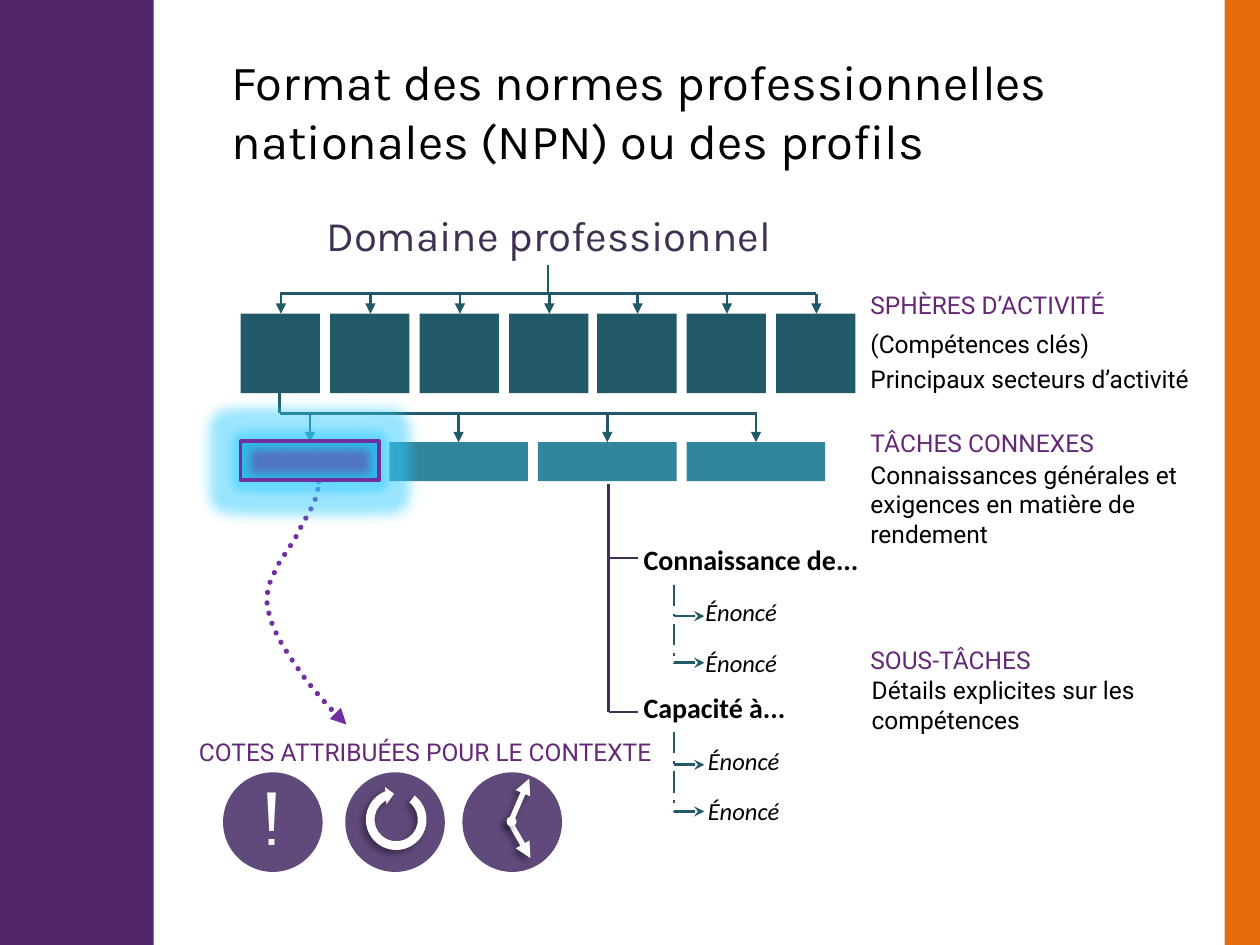
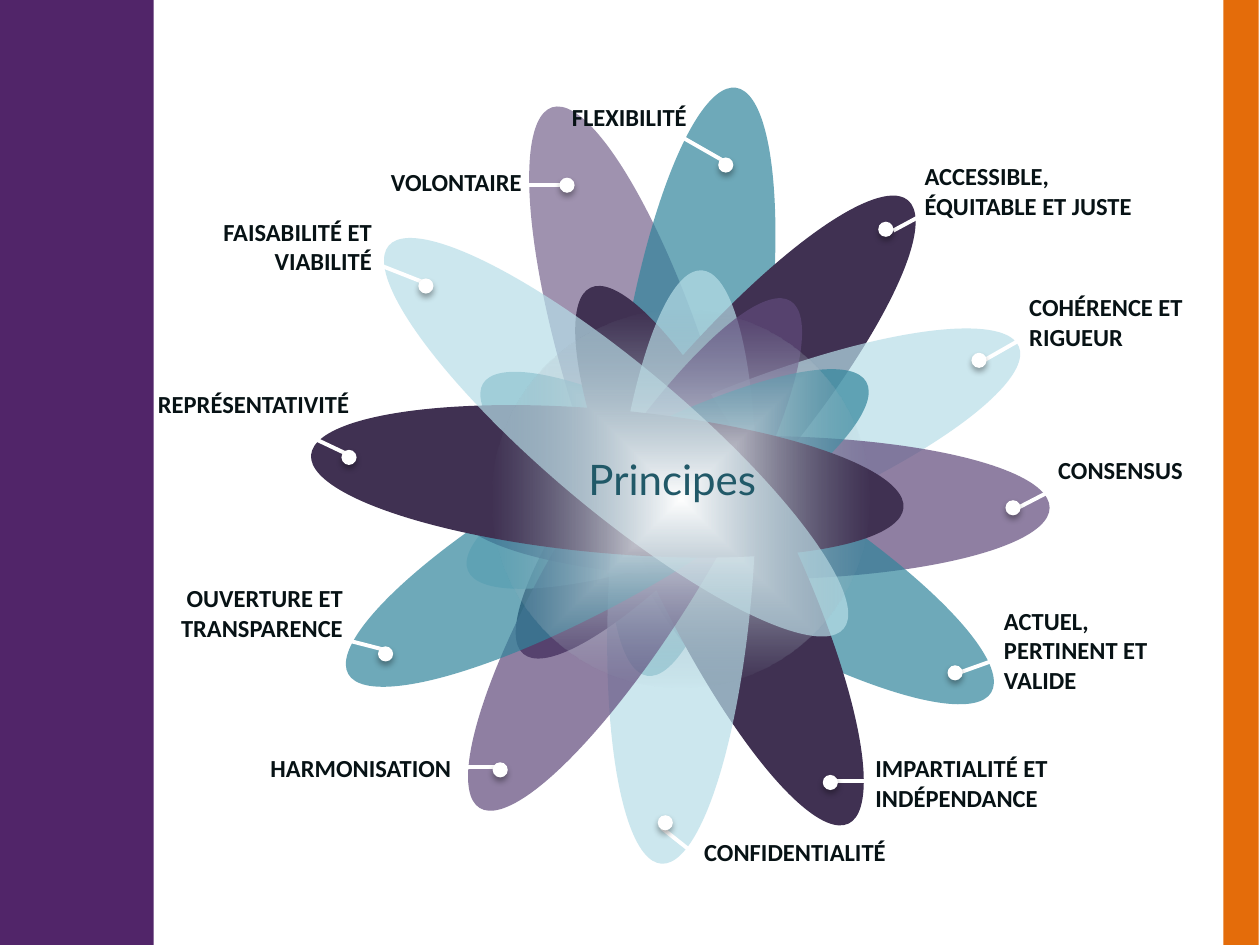
import itertools

import pptx
import pptx.dml.color
import pptx.enum.dml
import pptx.enum.shapes
import pptx.enum.text
import pptx.oxml
import pptx.oxml.ns
import pptx.util

PX = 9144
COLORS = {
    "band": "512569", "edge": "E46C0A", "heading": "652876", "violet": "7030A0",
    "plum": "604A7B", "dark": "403152", "deep": "215968", "teal": "31859C",
    "light": "B7DEE8", "ink": "071215", "black": "000000", "white": "FFFFFF",
    "glow": "33CCFF", "mist": "92A9B6",
}
FORMATS = {
    "title": {"size": 28, "name": "Karla"},
    "domain": {"size": 24, "name": "Karla"},
    "centre": {"size": 24, "name": "Lato"},
    "mark": {"size": 40, "name": "Cabin"},
    "body": {"size": 14, "name": "Roboto"},
    "topic": {"size": 16, "name": "Calibri", "bold": True},
    "statement": {"size": 14, "name": "Calibri", "italic": True},
    "principle": {"size": 14, "name": "Calibri", "bold": True},
}
ALIGN = {"l": pptx.enum.text.PP_ALIGN.LEFT, "c": pptx.enum.text.PP_ALIGN.CENTER,
         "r": pptx.enum.text.PP_ALIGN.RIGHT}
DASHES = {"dash": pptx.enum.dml.MSO_LINE.LONG_DASH_DOT,
          "dot": pptx.enum.dml.MSO_LINE.ROUND_DOT}
SHAPES = pptx.enum.shapes.MSO_SHAPE
HAND_SHADOW = (40, 4, 3, 135)
DOT_SHADOW = (32, 3.5, 2.2, 90)


def xml(tag, body="", **attrs):
    """Return one DrawingML element."""
    pairs = "".join(f' {k}="{v}"' for k, v in attrs.items())
    return pptx.oxml.parse_xml(
        f'<a:{tag} {pptx.oxml.ns.nsdecls("a")}{pairs}>{body}</a:{tag}>')


def rgb_xml(color, alpha):
    """Return the markup of a colour with an opacity in percent."""
    return f'<a:srgbClr val="{COLORS[color]}"><a:alpha val="{alpha * 1000}"/></a:srgbClr>'


def bezier(start, *curves):
    """Return points along a chain of cubic curves."""
    points = [start]
    for b, c, d in curves:
        a = points[-1]
        for t in (i / 12 for i in range(1, 13)):
            u = 1 - t
            points.append(tuple(
                u ** 3 * k + 3 * u * u * t * m + 3 * u * t * t * n + t ** 3 * o
                for k, m, n, o in zip(a, b, c, d)))
    return points


class Deck:
    """Holds the style and the current slide."""

    def __init__(self):
        """Start an empty presentation."""
        self.prs = pptx.Presentation()
        self.prs.slide_width, self.prs.slide_height = 1000 * PX, 750 * PX
        self.slide = None

    def new_slide(self):
        """Add a blank slide and make it current."""
        self.slide = self.prs.slides.add_slide(self.prs.slide_layouts[6])

    def rgb(self, color):
        """Look up a named colour."""
        return pptx.dml.color.RGBColor.from_string(COLORS[color])

    def bands(self, edge_x):
        """Draw the left band and the right edge."""
        self.shape(0, 0, 122, 750, "band")
        self.shape(edge_x, 0, 28, 750, "edge")

    def effects(self, s, *items):
        """Replace the effects of a shape or connector."""
        spPr = s._element.spPr
        for old in spPr.findall(pptx.oxml.ns.qn("a:effectLst")):
            spPr.remove(old)
        effects = xml("effectLst")
        for item in items:
            effects.append(item)
        spPr.append(effects)

    def shadow(self, alpha, blur, dist, angle):
        """Make an outer shadow."""
        return xml("outerShdw", rgb_xml("black", alpha), blurRad=round(blur * 12700),
                   dist=round(dist * 12700), dir=angle * 60000, rotWithShape=0)

    def outline(self, s, color, width, dash=None, tail=None):
        """Style a line and its arrowhead."""
        s.line.color.rgb = self.rgb(color)
        s.line.width = pptx.util.Pt(width)
        if dash:
            s.line.dash_style = DASHES[dash]
        ln = s._element.spPr.find(pptx.oxml.ns.qn("a:ln"))
        if dash == "dot":
            ln.set("cap", "rnd")
        if tail:
            ln.append(xml("tailEnd", type=tail))

    def shape(self, x, y, w, h, fill=None, kind=SHAPES.RECTANGLE, alpha=100,
              rot=0, line=None, shadow=None):
        """Add a preset shape."""
        s = self.slide.shapes.add_shape(kind, x * PX, y * PX, w * PX, h * PX)
        s.rotation = rot
        if fill:
            s.fill.solid()
            s.fill.fore_color.rgb = self.rgb(fill)
            if alpha < 100:
                clr = s._element.spPr.find(".//" + pptx.oxml.ns.qn("a:srgbClr"))
                clr.append(xml("alpha", val=alpha * 1000))
        else:
            s.fill.background()
        if line:
            self.outline(s, *line)
        else:
            s.line.fill.background()
        self.effects(s, *([self.shadow(*shadow)] if shadow else []))
        return s

    def halo(self, x, y, size, inner, outer):
        """Add a disc that fades from the centre out."""
        s = self.shape(x, y, size, size, inner, SHAPES.OVAL)
        spPr = s._element.spPr
        solid = spPr.find(pptx.oxml.ns.qn("a:solidFill"))
        spPr.replace(solid, xml(
            "gradFill",
            f'<a:gsLst><a:gs pos="0">{rgb_xml(inner, 100)}</a:gs>'
            f'<a:gs pos="100000">{rgb_xml(outer, 0)}</a:gs></a:gsLst>'
            '<a:path path="shape"><a:fillToRect l="50000" t="50000" r="50000" b="50000"/>'
            '</a:path>', rotWithShape=1))

    def line(self, x1, y1, x2, y2, color="deep", width=1.5, dash=None, tail=None, shadow=None):
        """Add a straight connector."""
        s = self.slide.shapes.add_connector(
            pptx.enum.shapes.MSO_CONNECTOR.STRAIGHT, x1 * PX, y1 * PX, x2 * PX, y2 * PX)
        self.outline(s, color, width, dash, tail)
        self.effects(s, *([self.shadow(*shadow)] if shadow else []))

    def curve(self, points, *line):
        """Add an open curved line."""
        fb = self.slide.shapes.build_freeform(*points[0], scale=PX)
        fb.add_line_segments(points[1:], close=False)
        s = fb.convert_to_shape()
        s.fill.background()
        self.outline(s, *line)
        self.effects(s)

    def text(self, x, y, w, h, text, style, color="black", align="l", after=0):
        """Add a text box with one paragraph per line."""
        tf = self.slide.shapes.add_textbox(x * PX, y * PX, w * PX, h * PX).text_frame
        tf.word_wrap = True
        tf.auto_size = pptx.enum.text.MSO_AUTO_SIZE.SHAPE_TO_FIT_TEXT
        for i, words in enumerate(text.split("\n")):
            p = tf.add_paragraph() if i else tf.paragraphs[0]
            p.alignment = ALIGN[align]
            p.space_after = pptx.util.Pt(after)
            r = p.add_run()
            r.text = words
            r.font.color.rgb = self.rgb(color)
            for k, v in FORMATS[style].items():
                setattr(r.font, k, pptx.util.Pt(v) if k == "size" else v)


def format_slide(d):
    """Build the tree of spheres, tasks and subtasks."""
    d.new_slide()
    d.curve(bezier((261, 381), ((240, 395), (233, 326), (252, 372)),
                   ((260, 409), (208, 447), (212, 480)),
                   ((216, 514), (264, 566), (275, 575))), "violet", 3, "dot", "triangle")

    d.line(483, 384, 483, 565, "dark")
    for topic, top, branch, stem, list_x, list_y, tips in (
            ("Connaissance de...", 426, 443, (464, 527), 550, 469, (489, 526)),
            ("Capacité à...", 543, 565, (581, 644), 552, 587, (607, 644))):
        d.text(501, top, 252, 35, topic, "topic")
        d.line(483, branch, 506, branch, "dark")
        d.line(535, stem[0], 535, stem[1], dash="dash")
        d.text(list_x, list_y, 252, 74, "Énoncé\nÉnoncé", "statement", after=12)
        for y in tips:
            d.line(535, y, 559, y, dash="dash", tail="stealth")

    d.text(240, 161, 391, 50, "Domaine professionnel", "domain", "dark", "c")
    d.line(435, 210, 435, 233)
    d.line(222, 233, 648, 233)
    for i in range(7):
        x = round(191 + i * 425 / 6)
        d.shape(x, 249, 63, 63, "deep")
        d.line(x + 32, 233, x + 32, 249, tail="triangle")
    d.line(222, 328, 222, 312)
    d.line(222, 328, 601, 328)
    for x in range(191, 546, 118):
        d.shape(x, 351, 110, 31, "teal")
        d.line(x + 55, 328, x + 55, 351, tail="triangle")
    s = d.shape(192, 350, 108, 33, "violet", alpha=49)
    d.effects(s, xml("glow", rgb_xml("glow", 50), rad=14 * 12700),
              xml("softEdge", rad=5 * 12700))
    d.shape(191, 350, 110, 31, line=("violet", 2))

    for x in (177, 274, 367):
        d.shape(x, 613, 79, 79, "plum", SHAPES.OVAL)
    d.text(191, 611, 50, 77, "!", "mark", "white", "c")
    s = d.shape(287, 623, 55, 55, "white", SHAPES.CIRCULAR_ARROW, rot=265.3, shadow=HAND_SHADOW)
    for i, v in enumerate((0.125, 11.42, 204.58, 25.39, 0.125)):
        s.adjustments[i] = v
    for x, y in ((420, 618), (421, 681)):
        d.line(405, 653, x, y, "white", 3, tail="triangle", shadow=HAND_SHADOW)
    d.shape(402, 648, 8, 8, "white", SHAPES.OVAL, shadow=HAND_SHADOW)

    for x, y, w, heading in ((148, 580, 381, "COTES ATTRIBUÉES POUR LE CONTEXTE"),
                             (681, 225, 276, "SPHÈRES D’ACTIVITÉ"),
                             (681, 335, 291, "TÂCHES CONNEXES"),
                             (681, 507, 316, "SOUS-TÂCHES")):
        d.text(x, y, w, 34, heading, "body", "heading")
    for x, y, w, h, note in (
            (681, 256, 236, 34, "(Compétences clés)"),
            (681, 284, 283, 34, "Principaux secteurs d’activité"),
            (681, 360, 283, 81, "Connaissances générales et exigences en matière de rendement"),
            (682, 531, 277, 57, "Détails explicites sur les compétences")):
        d.text(x, y, w, h, note, "body")
    d.text(174, 36, 775, 104,
           "Format des normes professionnelles nationales (NPN) ou des profils", "title")
    d.bands(972)


PETALS = (
    (453, 74, 342.3, 60), (492, 67, 8.6, 70), (511, 103, 40.3, 100), (533, 128, 67.9, 70),
    (540, 167, 90, 70), (528, 191, 121.3, 70), (514, 205, 154.3, 100), (484, 214, 183.9, 70),
    (447, 204, 211.5, 70), (425, 183, 240.6, 70), (425, 146, 275.1, 100), (432, 111, 310.1, 70),
)
PRINCIPLES = (
    ("ACCESSIBLE, ÉQUITABLE ET JUSTE", (724, 123, 194, 57), "l", (709, 183, 776, 147), (697, 176)),
    ("COHÉRENCE ET\nRIGUEUR", (807, 227, 228, 57), "l", (781, 286, 846, 249), (771, 280)),
    ("CONSENSUS", (830, 356, 169, 34), "l", (808, 403, 862, 375), (798, 397)),
    ("ACTUEL, PERTINENT ET VALIDE", (787, 476, 177, 81), "l", (761, 534, 831, 509), (752, 528)),
    ("IMPARTIALITÉ ET INDÉPENDANCE", (685, 593, 237, 57), "l", (663, 620, 734, 620), (653, 615)),
    ("CONFIDENTIALITÉ", (549, 659, 205, 34), "l", (525, 657, 549, 676), (522, 647)),
    ("HARMONISATION", (163, 593, 205, 34), "r", (328, 609, 399, 609), (391, 605)),
    ("OUVERTURE ET TRANSPARENCE", (77, 458, 205, 57), "r", (248, 501, 310, 517), (300, 513)),
    ("REPRÉSENTATIVITÉ", (92, 304, 195, 34), "r", (224, 336, 281, 363), (271, 357)),
    ("FAISABILITÉ ET VIABILITÉ", (100, 167, 205, 57), "r", (280, 202, 341, 226), (332, 221)),
    ("VOLONTAIRE", (219, 128, 205, 34), "r", (378, 147, 449, 147), (444, 141)),
    ("FLEXIBILITÉ", (350, 76, 205, 34), "r", (524, 99, 580, 131), (570, 125)),
)


def principles_slide(d):
    """Build the flower of principles."""
    d.new_slide()
    d.bands(971)
    hues = itertools.cycle(("plum", "teal", "dark", "light"))
    for (x, y, rot, alpha), hue in zip(PETALS, hues):
        d.shape(x, y, 114, 472, hue, SHAPES.OVAL, alpha, rot)
    for name, box, align, leader, dot in PRINCIPLES:
        d.line(*leader, "white", 2.25)
        d.shape(*dot, 12, 12, "white", SHAPES.OVAL, shadow=DOT_SHADOW)
        d.text(*box, name, "principle", "ink", align)
    d.halo(390, 246, 300, "white", "mist")
    d.text(384, 355, 299, 50, "Principes", "centre", "deep", "c")


def main():
    """Build and save the deck."""
    d = Deck()
    format_slide(d)
    principles_slide(d)
    d.prs.save("out.pptx")


if __name__ == "__main__":
    main()
